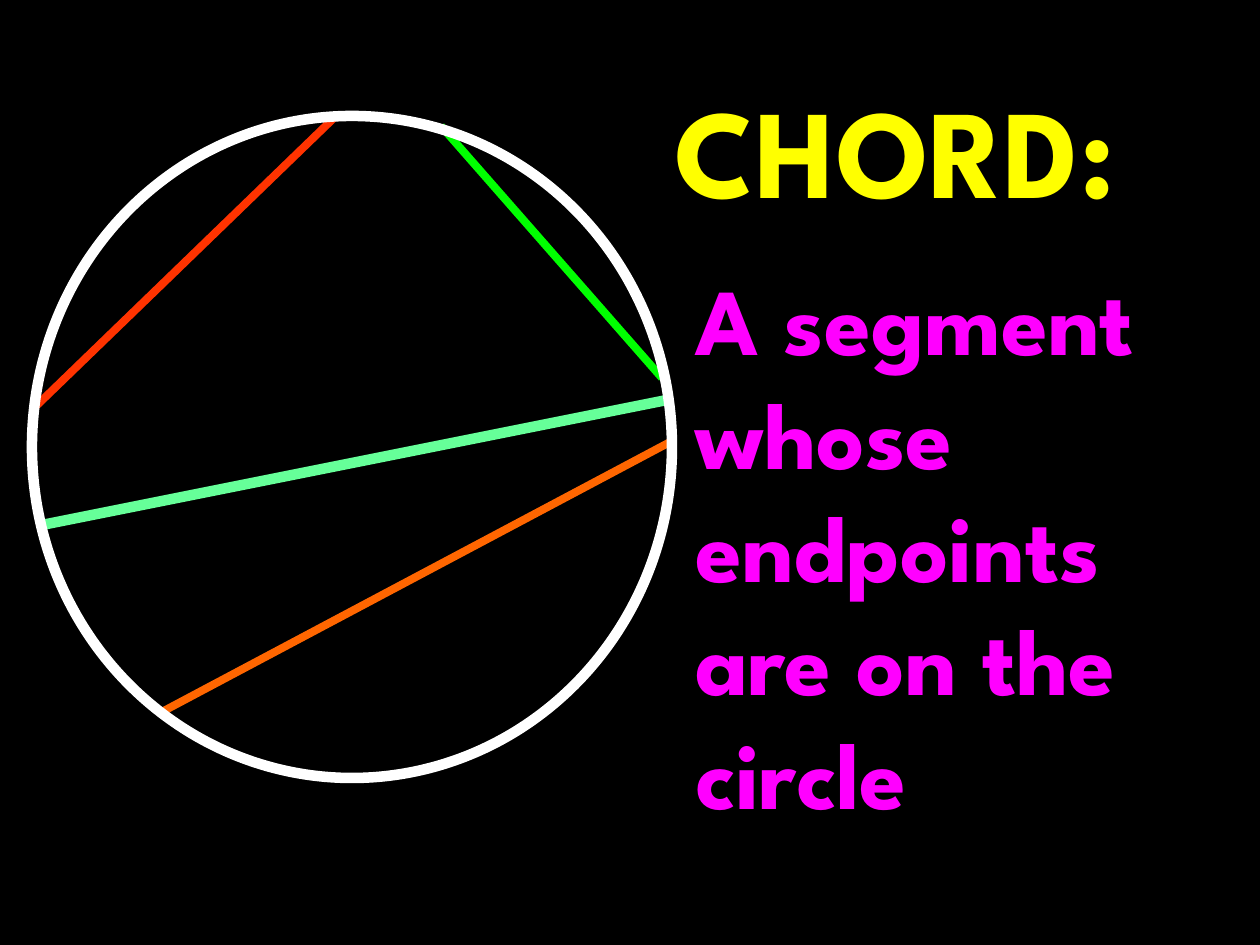
from dataclasses import dataclass
from typing import NamedTuple

from lxml.etree import SubElement
from pptx import Presentation
from pptx.dml.color import RGBColor
from pptx.enum.shapes import MSO_CONNECTOR, MSO_SHAPE
from pptx.enum.text import MSO_ANCHOR, MSO_AUTO_SIZE, PP_ALIGN
from pptx.oxml.ns import qn
from pptx.util import Emu, Pt

PX_PER_INCH = 126


@dataclass(frozen=True)
class Theme:
    font: str = "League Spartan"
    back: str = "000000"
    title: str = "FFFF00"
    body: str = "FF00FF"
    ring: str = "FFFFFF"
    red: str = "FF3300"
    green: str = "00FF00"
    mint: str = "66FF99"
    orange: str = "FF6600"
    title_size: int = 72
    body_size: int = 54
    thin: float = 4.5
    thick: float = 6


class Box(NamedTuple):
    left: int
    top: int
    width: int
    height: int


class Chord(NamedTuple):
    x1: int
    y1: int
    x2: int
    y2: int
    color: str
    weight: float


THEME = Theme()
CIRCLE = Box(32, 116, 640, 662)
TITLE = Box(662, 66, 598, 165)
BODY = Box(683, 255, 557, 585)
CHORDS = [
    Chord(158, 714, 672, 441, THEME.orange, THEME.thin),
    Chord(32, 410, 336, 116, THEME.red, THEME.thin),
    Chord(441, 126, 662, 378, THEME.green, THEME.thin),
    Chord(42, 525, 672, 399, THEME.mint, THEME.thick),
]


def px(*values: int) -> list[Emu]:
    """Turn pixel lengths into EMU."""
    return [Emu(round(value * 914400 / PX_PER_INCH)) for value in values]


def set_line(shape, color: str, weight: float) -> None:
    shape.line.color.rgb = RGBColor.from_string(color)
    shape.line.width = Pt(weight)


def draw_chord(slide, chord: Chord) -> None:
    ends = px(chord.x1, chord.y1, chord.x2, chord.y2)
    line = slide.shapes.add_connector(MSO_CONNECTOR.STRAIGHT, *ends)
    set_line(line, chord.color, chord.weight)
    SubElement(line._element.spPr, qn("a:effectLst"))


def draw_circle(slide, box: Box) -> None:
    circle = slide.shapes.add_shape(MSO_SHAPE.OVAL, *px(*box))
    circle.shadow.inherit = False
    circle.fill.background()
    set_line(circle, THEME.ring, THEME.thick)


def set_text(shape, box: Box, text: str, size: int, color: str) -> None:
    shape.left, shape.top, shape.width, shape.height = px(*box)
    frame = shape.text_frame
    frame.text = text
    frame.word_wrap = True
    frame.auto_size = MSO_AUTO_SIZE.SHAPE_TO_FIT_TEXT
    frame.vertical_anchor = MSO_ANCHOR.TOP
    para = frame.paragraphs[0]
    para.alignment = PP_ALIGN.LEFT
    font = para.runs[0].font
    font.name, font.size, font.bold = THEME.font, Pt(size), True
    font.color.rgb = RGBColor.from_string(color)


def main() -> None:
    deck = Presentation()
    deck.slide_width, deck.slide_height = px(1260, 945)
    slide = deck.slides.add_slide(deck.slide_layouts[5])
    fill = slide.background.fill
    fill.solid()
    fill.fore_color.rgb = RGBColor.from_string(THEME.back)

    set_text(slide.shapes.title, TITLE, "CHORD:", THEME.title_size, THEME.title)
    for chord in CHORDS:
        draw_chord(slide, chord)
    body = slide.shapes.add_textbox(*px(*BODY))
    set_text(body, BODY, "A segment whose endpoints are on the circle",
             THEME.body_size, THEME.body)
    draw_circle(slide, CIRCLE)
    deck.save("out.pptx")


if __name__ == "__main__":
    main()
